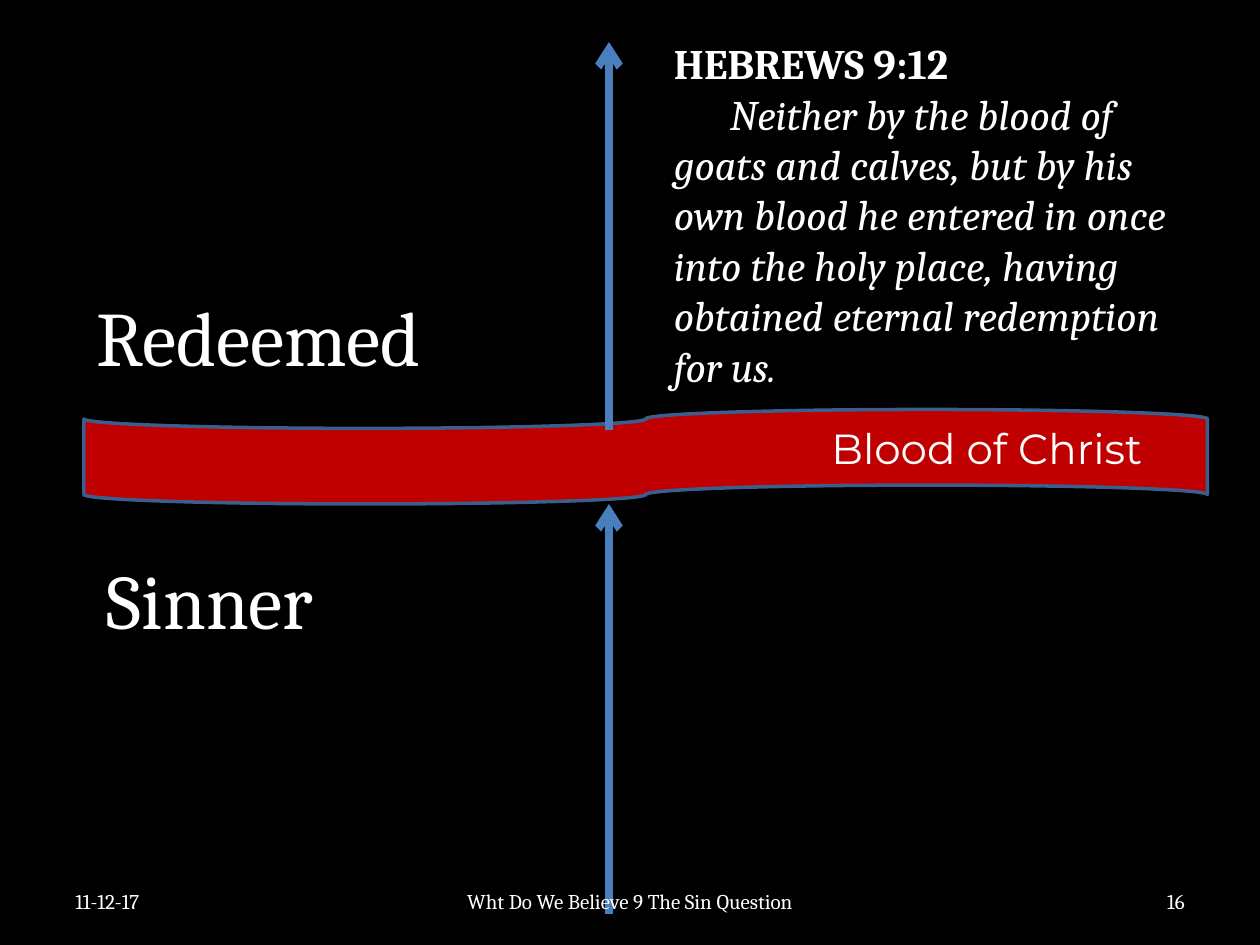
from dataclasses import dataclass

import pptx
import pptx.dml.color
import pptx.enum.dml
import pptx.enum.shapes
import pptx.enum.text
import pptx.oxml.ns
import pptx.slide
import pptx.text.text
import pptx.util
from lxml import etree

Pt = pptx.util.Pt
Align = pptx.enum.text.PP_ALIGN
Anchor = pptx.enum.text.MSO_ANCHOR
qn = pptx.oxml.ns.qn

WHITE = "FFFFFF"
FOOTER_TOP, FOOTER_HEIGHT = 500.4, 28.8


@dataclass(frozen=True)
class Label:
    text: str
    left: float
    top: float
    width: float
    height: float
    size: float
    font: str = "Cambria"
    align: Align = Align.LEFT
    anchor: Anchor = Anchor.TOP
    wrap: bool = False


@dataclass(frozen=True)
class Arrow:
    x: float
    start: float
    end: float


LABELS = [
    Label("Blood of Christ", 468, 237.8, 212.4, 36.7, 24, "Montserrat"),
    Label("Sinner", 54, 312, 139, 60.5, 44),
    Label("Redeemed", 48, 162, 214.6, 60.5, 44),
]
ARROWS = [Arrow(348, 522, 288), Arrow(348, 246, 24)]
FOOTERS = [
    Label(text, left, FOOTER_TOP, width, FOOTER_HEIGHT, 12,
          align=align, anchor=Anchor.MIDDLE, wrap=True)
    for text, left, width, align in [
        ("11-12-17", 36, 168, Align.LEFT),
        ("16", 516, 168, Align.RIGHT),
        ("Wht Do We Believe 9 The Sin Question", 246, 228, Align.CENTER),
    ]
]
VERSE = Label("HEBREWS 9:12", 378, 18, 318, 211, 24, wrap=True)
VERSE_TEXT = (
    "Neither by the blood of goats and calves, but by his own blood he entered "
    "in once into the holy place, having obtained eternal redemption for us."
)
VERSE_INDENT = 32


def set_color(color_format, value: str) -> None:
    color_format.solid()
    color_format.fore_color.rgb = pptx.dml.color.RGBColor.from_string(value)


def style_paragraph(paragraph: pptx.text.text._Paragraph, label: Label) -> None:
    paragraph.alignment = label.align
    paragraph.font.name = label.font
    paragraph.font.size = Pt(label.size)
    set_color(paragraph.font.fill, WHITE)


def add_label(slide: pptx.slide.Slide, label: Label) -> pptx.text.text.TextFrame:
    box = slide.shapes.add_textbox(
        Pt(label.left), Pt(label.top), Pt(label.width), Pt(label.height))
    frame = box.text_frame
    frame.word_wrap = label.wrap
    frame.vertical_anchor = label.anchor
    frame.text = label.text
    style_paragraph(frame.paragraphs[0], label)
    return frame


def add_verse(slide: pptx.slide.Slide) -> None:
    frame = add_label(slide, VERSE)
    frame.paragraphs[0].font.bold = True
    paragraph = frame.add_paragraph()
    paragraph.text = VERSE_TEXT
    style_paragraph(paragraph, VERSE)
    paragraph.font.italic = True
    properties = paragraph._p.get_or_add_pPr()
    properties.set("marL", "0")
    properties.set("indent", str(Pt(VERSE_INDENT)))


def add_arrow(slide: pptx.slide.Slide, arrow: Arrow) -> None:
    connector = slide.shapes.add_connector(
        pptx.enum.shapes.MSO_CONNECTOR.STRAIGHT,
        Pt(arrow.x), Pt(arrow.start), Pt(arrow.x), Pt(arrow.end))
    set_color(connector.line.fill, "4B7EBC")
    connector.line.width = Pt(4.5)
    etree.SubElement(connector.line._get_or_add_ln(), qn("a:tailEnd"), type="arrow")
    etree.SubElement(connector._element.spPr, qn("a:effectLst"))


def add_ribbon(slide: pptx.slide.Slide) -> None:
    ribbon = slide.shapes.add_shape(
        pptx.enum.shapes.MSO_SHAPE.FLOWCHART_PUNCHED_TAPE,
        Pt(48), Pt(234), Pt(642), Pt(54))
    ribbon.shadow.inherit = False
    set_color(ribbon.fill, "C00000")
    set_color(ribbon.line.fill, "3A5F8C")
    ribbon.line.width = Pt(2)


def main() -> None:
    presentation = pptx.Presentation()
    presentation.slide_width = Pt(720)
    presentation.slide_height = Pt(540)
    slide = presentation.slides.add_slide(presentation.slide_layouts[6])
    set_color(slide.background.fill, "000000")
    add_ribbon(slide)
    for label in LABELS:
        add_label(slide, label)
    for arrow in ARROWS:
        add_arrow(slide, arrow)
    for footer in FOOTERS:
        add_label(slide, footer)
    add_verse(slide)
    presentation.save("out.pptx")


if __name__ == "__main__":
    main()
